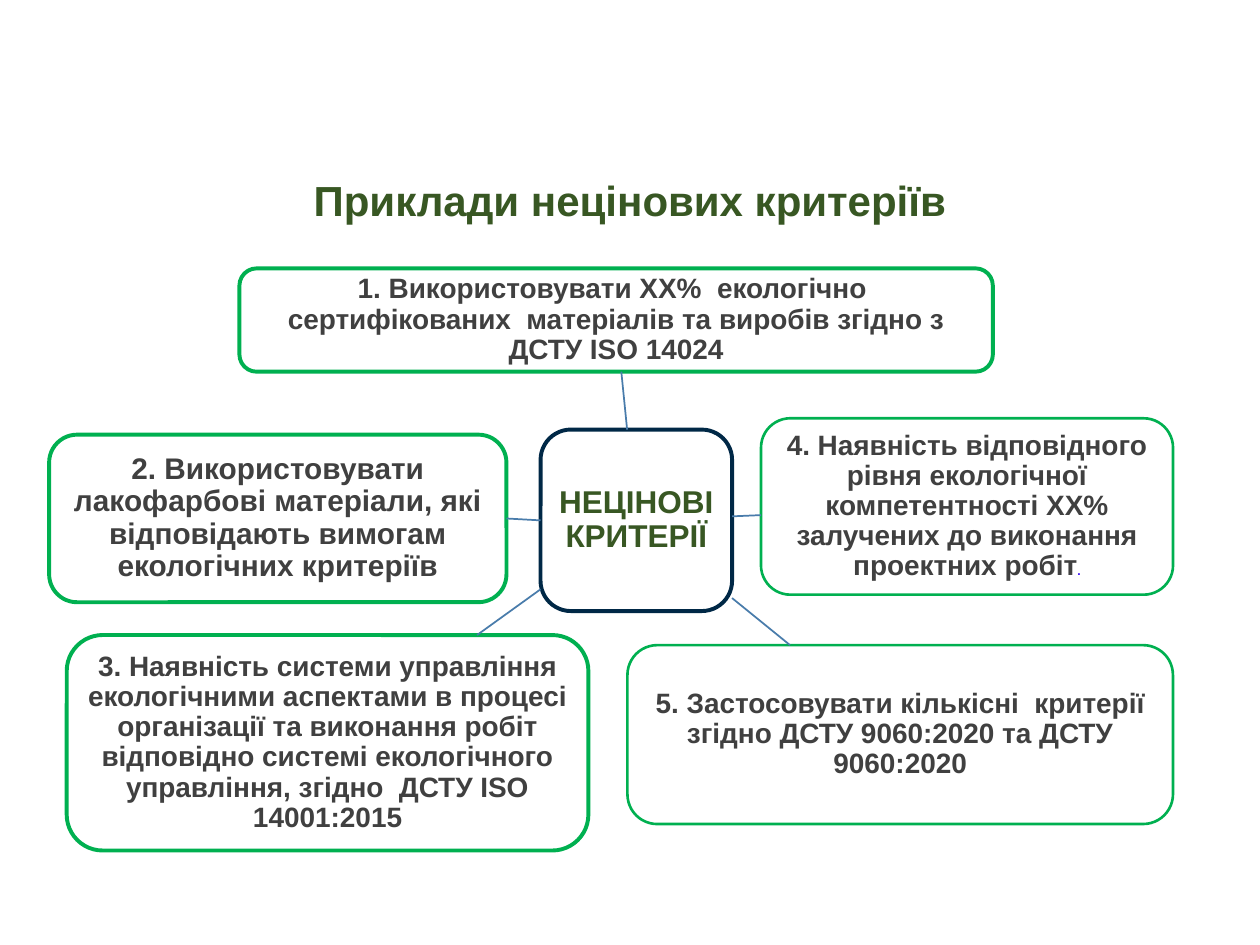
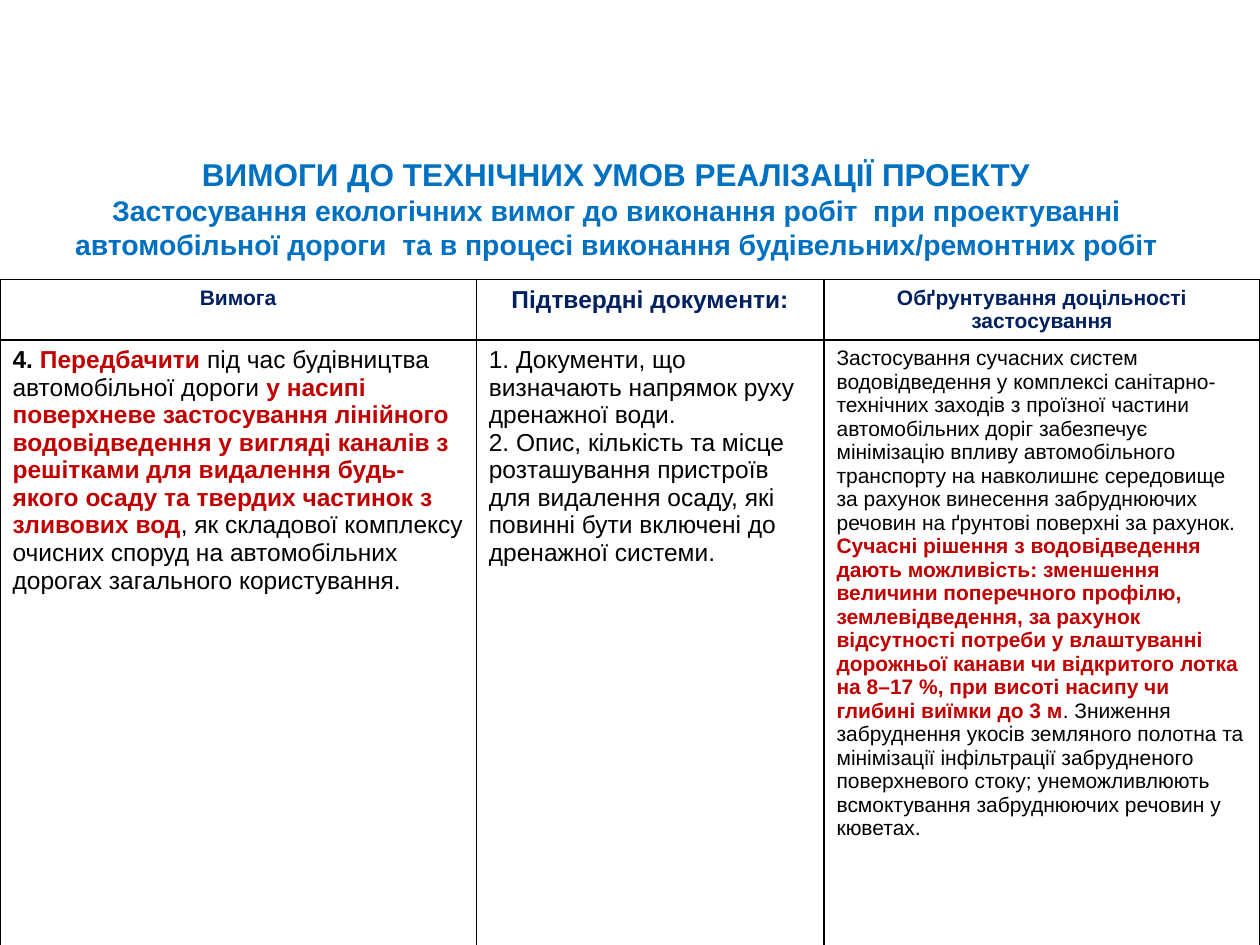
from lxml import etree
from pptx import Presentation
from pptx.dml.color import RGBColor
from pptx.enum.shapes import MSO_CONNECTOR, MSO_SHAPE
from pptx.enum.text import MSO_ANCHOR, MSO_AUTO_SIZE, PP_ALIGN
from pptx.oxml import parse_xml
from pptx.oxml.ns import nsdecls, qn
from pptx.util import Inches, Pt

FONT = "Arial"
WHITE = RGBColor(0xFF, 0xFF, 0xFF)
BLACK = RGBColor(0x00, 0x00, 0x00)
DARK_GREEN = RGBColor(0x38, 0x57, 0x23)
GREEN = RGBColor(0x00, 0xB0, 0x50)
HUB_LINE = RGBColor(0x00, 0x28, 0x46)
LINK = RGBColor(0x49, 0x7C, 0xAB)
GREY = RGBColor(0x40, 0x40, 0x40)
VIOLET = RGBColor(0x38, 0x0C, 0xF4)
BLUE = RGBColor(0x00, 0x70, 0xC0)
NAVY = RGBColor(0x00, 0x20, 0x60)
RED = RGBColor(0xC0, 0x00, 0x00)

TOP, LEFT, BOTTOM, RIGHT = range(4)

HUB_BOX = (4.29, 3.41, 1.52, 1.44)
# box, outline width, text size, text
CRITERIA = [
    ((1.9, 2.13, 5.98, 0.82), 2.25, 16,
     "1. Використовувати ХХ%  екологічно  сертифікованих  матеріалів та "
     "виробів згідно з ДСТУ ISO 14024"),
    ((0.39, 3.45, 3.63, 1.33), 2.25, 17,
     "2. Використовувати лакофарбові матеріали, які відповідають вимогам "
     "екологічних критеріїв"),
    ((0.53, 5.04, 4.14, 1.71), 2.25, 16,
     "3. Наявність системи управління екологічними аспектами в процесі "
     "організації та виконання робіт відповідно системі екологічного "
     "управління, згідно  ДСТУ ISO 14001:2015"),
    ((6.04, 3.32, 3.27, 1.4), 1.5, 16,
     "4. Наявність відповідного рівня екологічної компетентності ХХ% "
     "залучених до виконання проектних робіт"),
    ((4.98, 5.12, 4.33, 1.42), 1.5, 16,
     "5. Застосовувати кількісні  критерії згідно ДСТУ 9060:2020 та "
     "ДСТУ 9060:2020"),
]

COLUMN_WIDTHS = (3.78, 2.76, 3.46)
ROW_HEIGHTS = (0.48, 4.88)
HEADERS = [("Вимога", 12), ("Підтвердні документи:", 14),
           ("Обґрунтування доцільності застосування", 12)]
# one entry per cell: text size and paragraphs made of (text, colour, bold)
REQUIREMENT = [
    (14, [[
        ("4. ", BLACK, True),
        ("Передбачити", RED, True),
        (" під час будівництва автомобільної дороги ", BLACK, False),
        ("у насипі поверхневе застосування лінійного водовідведення у вигляді "
         "каналів з решітками для видалення будь-якого осаду та твердих "
         "частинок з зливових вод", RED, True),
        (", як складової комплексу очисних споруд на автомобільних дорогах "
         "загального користування.", BLACK, False)]]),
    (14, [
        [("1. Документи, що визначають напрямок руху дренажної води.",
          BLACK, False)],
        [("2. Опис, кількість та місце розташування пристроїв для видалення "
          "осаду, які повинні бути включені до дренажної системи.",
          BLACK, False)]]),
    (12, [
        [("Застосування сучасних систем водовідведення у комплексі "
          "санітарно-технічних заходів з проїзної частини автомобільних доріг "
          "забезпечує мінімізацію впливу автомобільного транспорту на "
          "навколишнє середовище за рахунок винесення забруднюючих речовин на "
          "ґрунтові поверхні за рахунок.", BLACK, False)],
        [("Сучасні рішення з водовідведення дають можливість: зменшення "
          "величини поперечного профілю, землевідведення, за рахунок "
          "відсутності потреби у влаштуванні дорожньої канави чи відкритого "
          "лотка на 8–17 %, при висоті насипу чи глибині виїмки до 3 м",
          RED, True),
         (". Зниження забруднення укосів земляного полотна та мінімізації "
          "інфільтрації забрудненого поверхневого стоку; унеможливлюють "
          "всмоктування забруднюючих речовин у кюветах.", BLACK, False)]]),
]


def add_run(p, text, size, color, bold=True):
    r = p.add_run()
    r.text = text
    r.font.name, r.font.size, r.font.bold = FONT, Pt(size), bold
    r.font.color.rgb = color


def set_title(s, box, lines, color, spacing):
    """Place the title; lines holds (text, size) pairs, one per paragraph."""
    title = s.shapes.title
    title.left, title.top, title.width, title.height = map(Inches, box)
    tf = title.text_frame
    tf.auto_size = MSO_AUTO_SIZE.NONE
    tf.vertical_anchor = MSO_ANCHOR.MIDDLE
    for i, (text, size) in enumerate(lines):
        p = tf.add_paragraph() if i else tf.paragraphs[0]
        p.alignment, p.line_spacing = PP_ALIGN.CENTER, spacing
        add_run(p, text, size, color)
    return tf


def add_card(s, box, line_color, line_width, text, size, text_color):
    sp = s.shapes.add_shape(MSO_SHAPE.ROUNDED_RECTANGLE, *map(Inches, box))
    sp.shadow.inherit = False
    sp.fill.solid()
    sp.fill.fore_color.rgb = WHITE
    sp.line.color.rgb, sp.line.width = line_color, Pt(line_width)
    tf = sp.text_frame
    tf.word_wrap = True
    tf.vertical_anchor = MSO_ANCHOR.MIDDLE
    tf.margin_left = tf.margin_right = Inches(0.04)
    tf.margin_top = tf.margin_bottom = Inches(0.04)
    p = tf.paragraphs[0]
    p.alignment, p.line_spacing = PP_ALIGN.CENTER, 0.9
    add_run(p, text, size, text_color)
    return sp


def center(box):
    x, y, w, h = box
    return x + w / 2, y + h / 2


def edge_point(box, target):
    """Where the line from the centre of box to target leaves the box."""
    (cx, cy), (tx, ty) = center(box), target
    dx, dy = tx - cx, ty - cy
    scale = 0.5 / max(abs(dx) / box[2], abs(dy) / box[3])
    return cx + dx * scale, cy + dy * scale


def add_link(s, hub, card, box):
    start = edge_point(HUB_BOX, center(box))
    end = edge_point(box, center(HUB_BOX))
    link = s.shapes.add_connector(MSO_CONNECTOR.STRAIGHT,
                                  *map(Inches, start + end))
    if abs(center(box)[1] - center(HUB_BOX)[1]) < 0.05:
        link.begin_connect(hub, LEFT)
        link.end_connect(card, RIGHT)
    link.line.color.rgb, link.line.width = LINK, Pt(1)
    etree.SubElement(link._element.spPr, qn("a:effectLst"))


def criteria_slide(prs):
    s = prs.slides.add_slide(prs.slide_layouts[5])
    set_title(s, (0.69, 1.3, 8.62, 0.62),
              [("Приклади нецінових критеріїв", 24)], DARK_GREEN, 0.9)
    hub = add_card(s, HUB_BOX, HUB_LINE, 2.25, "НЕЦІНОВІ КРИТЕРІЇ", 18,
                   DARK_GREEN)
    for box, line_width, size, text in CRITERIA:
        card = add_card(s, box, GREEN, line_width, text, size, GREY)
        if text.startswith("4."):
            add_run(card.text_frame.paragraphs[0], ".", 7, VIOLET)
        add_link(s, hub, card, box)


def fill_cell(cell, size, paragraphs, alignment):
    cell.fill.solid()
    cell.fill.fore_color.rgb = WHITE
    for i, runs in enumerate(paragraphs):
        tf = cell.text_frame
        p = tf.add_paragraph() if i else tf.paragraphs[0]
        p.alignment = alignment
        for text, color, bold in runs:
            add_run(p, text, size, color, bold)
    tc_pr = cell._tc.get_or_add_tcPr()
    for i, side in enumerate(("lnL", "lnR", "lnT", "lnB")):
        tc_pr.insert(i, parse_xml(
            f'<a:{side} {nsdecls("a")} w="{Pt(1)}"><a:solidFill>'
            f'<a:srgbClr val="{BLACK}"/></a:solidFill></a:{side}>'))


def add_requirement_table(s, left, top):
    table = s.shapes.add_table(
        len(ROW_HEIGHTS), len(COLUMN_WIDTHS), Inches(left), Inches(top),
        Inches(sum(COLUMN_WIDTHS)), Inches(sum(ROW_HEIGHTS))).table
    table.first_row = table.horz_banding = False
    for row, height in zip(table.rows, ROW_HEIGHTS):
        row.height = Inches(height)
    for c, width in enumerate(COLUMN_WIDTHS):
        table.columns[c].width = Inches(width)
        header, header_size = HEADERS[c]
        fill_cell(table.cell(0, c), header_size, [[(header, NAVY, True)]],
                  PP_ALIGN.CENTER)
        fill_cell(table.cell(1, c), *REQUIREMENT[c], PP_ALIGN.LEFT)


def requirements_slide(prs):
    s = prs.slides.add_slide(prs.slide_layouts[5])
    tf = set_title(s, (0, 1.36, 9.78, 0.85), [
        ("ВИМОГИ ДО ТЕХНІЧНИХ УМОВ РЕАЛІЗАЦІЇ ПРОЕКТУ", 18),
        ("Застосування екологічних вимог до виконання робіт  при проектуванні "
         "автомобільної дороги  та в процесі виконання "
         "будівельних/ремонтних робіт", 16.2)], BLUE, 1.0)
    tf.margin_bottom = Inches(0.32)
    add_requirement_table(s, 0, 2.22)


def main():
    prs = Presentation()
    prs.slide_width, prs.slide_height = Inches(10), Inches(7.5)
    criteria_slide(prs)
    requirements_slide(prs)
    prs.save("out.pptx")


if __name__ == "__main__":
    main()
